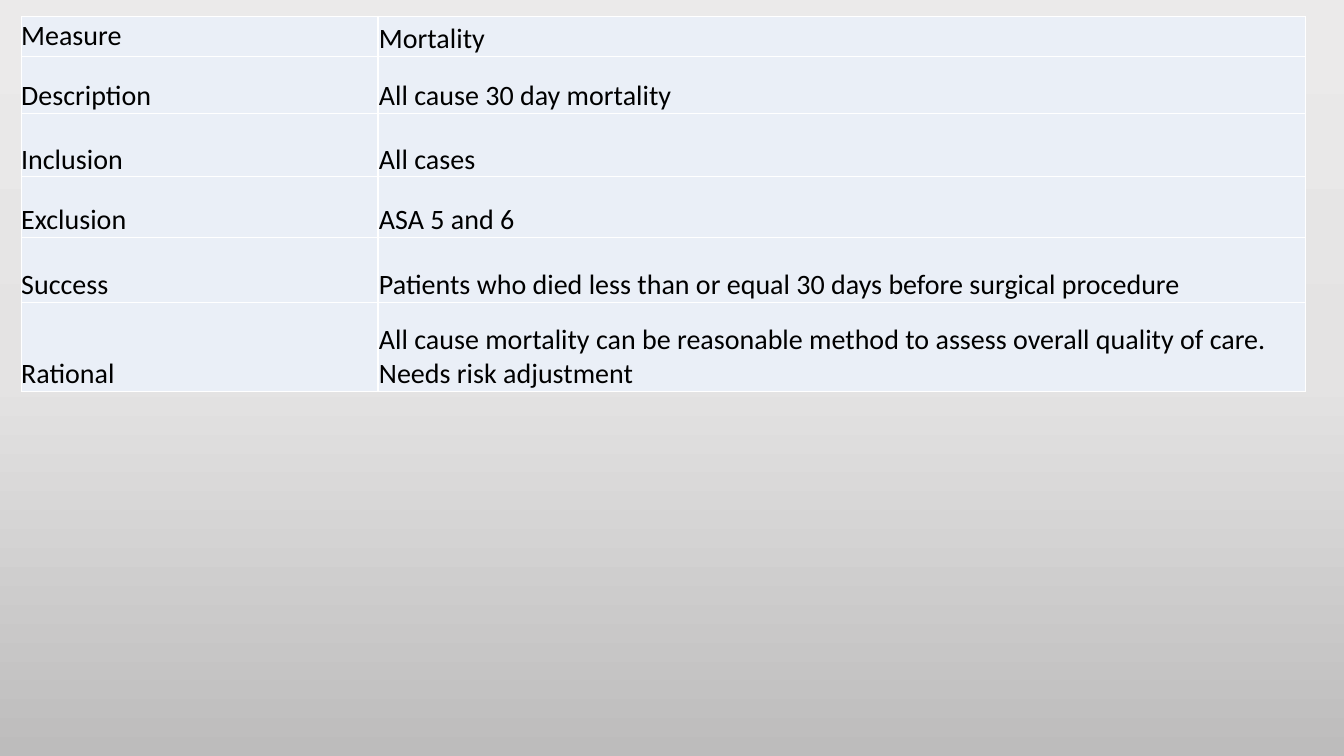
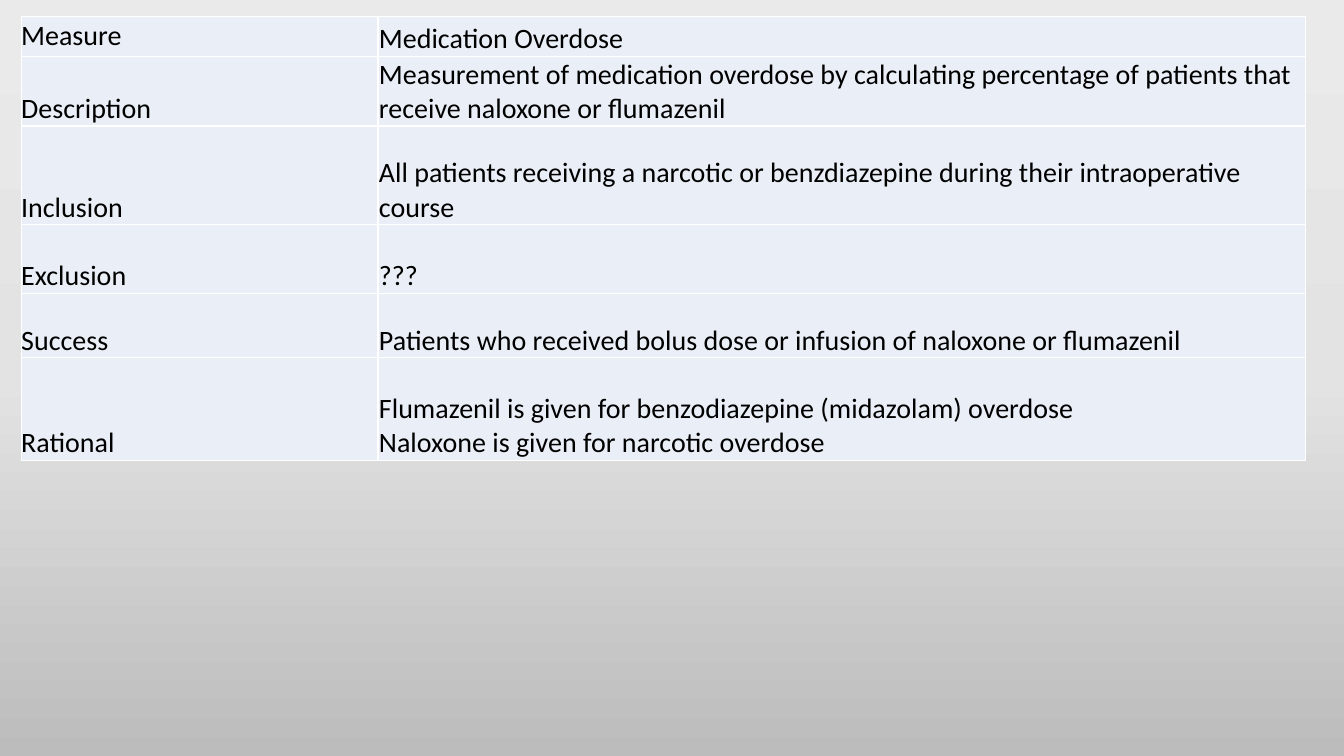
import copy

import pptx
import pptx.dml.color
import pptx.enum.text
import pptx.oxml
import pptx.oxml.ns
import pptx.util

Pt = pptx.util.Pt
Anchor = pptx.enum.text.MSO_ANCHOR


def rgb(code):
    return pptx.dml.color.RGBColor.from_string(code)


THEME = {
    "sky": [(0, "EBEAEA"), (0.5, "E4E3E3"), (1, "BDBCBC")],
    "cell": rgb("EAEFF7"),
    "rule": "FFFFFF",
    "font": {"name": "Calibri", "size": Pt(20), "bold": False},
    "ink": rgb("000000"),
}
LEFT, TOP = 15.1, 11.5
COLS = [254.9, 662.4]
PADS = [
    {"margin_left": 0, "margin_right": 0, "margin_top": 0, "margin_bottom": 0},
    {"margin_left": Pt(0.7), "margin_right": Pt(0.7),
     "margin_top": Pt(0.7), "margin_bottom": 0},
]
LABELS = ["Measure", "Description", "Inclusion", "Exclusion", "Success", "Rational"]

# Each row is its height and its text; \v breaks a line.
SLIDES = [
    [
        (28.8, "Mortality"),
        (40.8, "All cause 30 day mortality"),
        (45.2, "All cases"),
        (43.4, "ASA 5 and 6"),
        (46.2, "Patients who died less than or equal 30 days before surgical procedure"),
        (63.8, "All cause mortality can be reasonable method to assess overall "
               "quality of care. Needs risk adjustment"),
    ],
    [
        (28.8, "Medication Overdose"),
        (49.4, "Measurement of medication overdose by calculating percentage of "
               "patients that receive naloxone or flumazenil"),
        (70.6, "All patients receiving a narcotic or benzdiazepine during their "
               "intraoperative course"),
        (48.8, "???"),
        (46.2, "Patients who received bolus dose or infusion of naloxone or flumazenil"),
        (73.4, "Flumazenil is given for benzodiazepine (midazolam) overdose\v"
               "Naloxone is given for narcotic overdose"),
    ],
]


def shade(master):
    """Give the master its three-stop gradient, running top to bottom."""
    fill = master.background.fill
    fill.gradient()
    fill.gradient_angle = 270
    stops = next(master.element.iter(pptx.oxml.ns.qn("a:gsLst")))
    stops.insert(1, copy.deepcopy(stops[0]))
    for stop, (place, code) in zip(fill.gradient_stops, THEME["sky"]):
        stop.position = place
        stop.color.rgb = rgb(code)


def border(cell):
    props = cell._tc.get_or_add_tcPr()
    for spot, side in enumerate("LRTB"):
        props.insert(spot, pptx.oxml.parse_xml(
            f'<a:ln{side} {pptx.oxml.ns.nsdecls("a")} w="{Pt(1)}"><a:solidFill>'
            f'<a:srgbClr val="{THEME["rule"]}"/></a:solidFill></a:ln{side}>'))


def style(cell, text, pad, anchor):
    cell.text = text
    for key, value in {**pad, "vertical_anchor": anchor}.items():
        setattr(cell, key, value)
    cell.fill.solid()
    cell.fill.fore_color.rgb = THEME["cell"]
    border(cell)
    for run in cell.text_frame.paragraphs[0].runs:
        for key, value in THEME["font"].items():
            setattr(run.font, key, value)
        run.font.color.rgb = THEME["ink"]


def add_grid(slide, rows):
    high = sum(height for height, _ in rows)
    table = slide.shapes.add_table(
        len(rows), len(COLS), Pt(LEFT), Pt(TOP), Pt(sum(COLS)), Pt(high)).table
    table.first_row = table.horz_banding = False
    for col, width in zip(table.columns, COLS):
        col.width = Pt(width)
    for r, (label, (height, text)) in enumerate(zip(LABELS, rows)):
        table.rows[r].height = Pt(height)
        for c, words in enumerate((label, text)):
            anchor = Anchor.MIDDLE if r == c == 0 else Anchor.BOTTOM
            style(table.cell(r, c), words, PADS[c], anchor)


def main():
    deck = pptx.Presentation()
    deck.slide_width, deck.slide_height = Pt(960), Pt(540)
    shade(deck.slide_master)
    for rows in SLIDES:
        add_grid(deck.slides.add_slide(deck.slide_layouts[6]), rows)
    deck.save("out.pptx")


if __name__ == "__main__":
    main()
